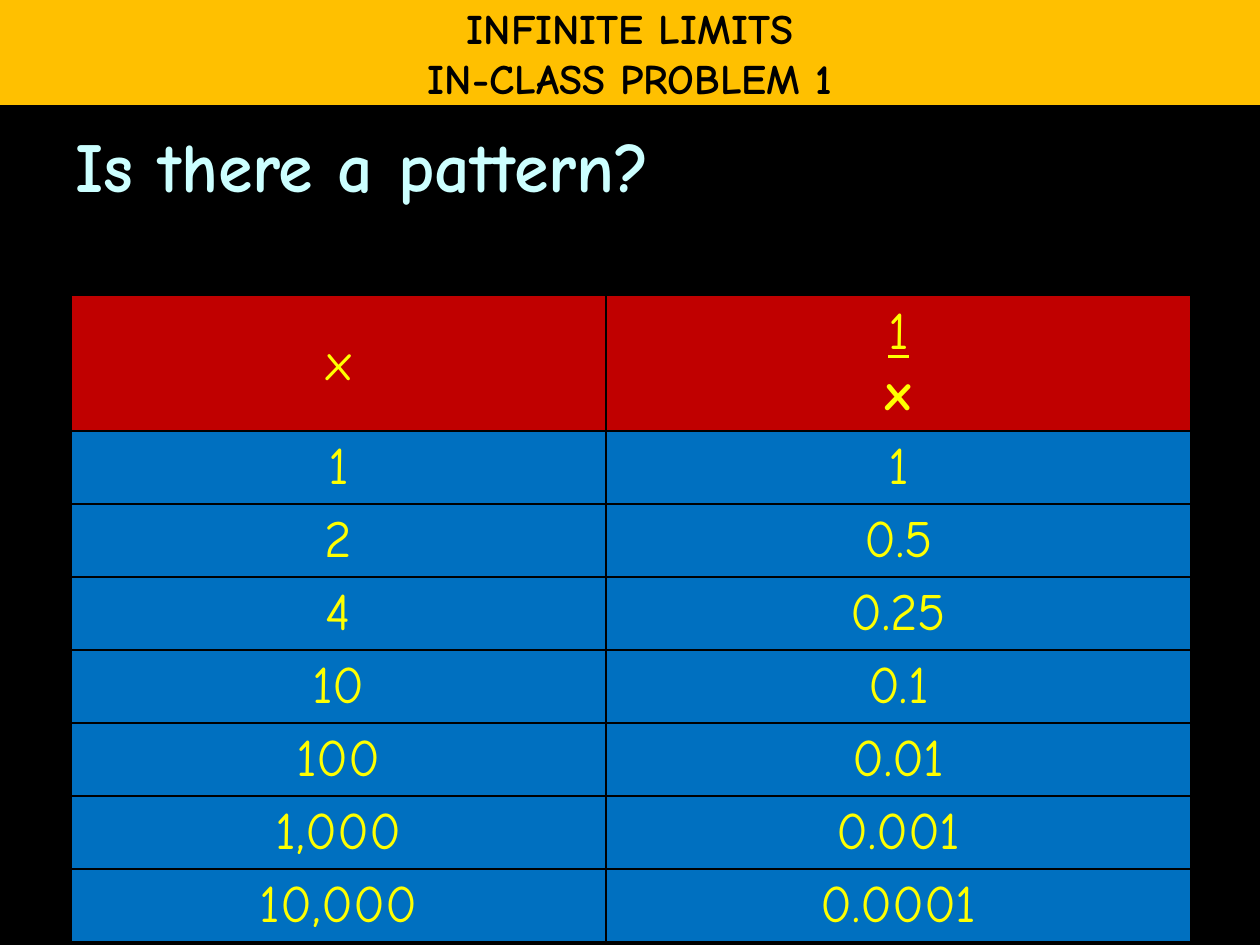
from lxml import etree
from pptx import Presentation, util as u
from pptx.dml.color import RGBColor
from pptx.enum import shapes, text
from pptx.oxml.ns import qn

PX = 914400 / 126
FONT = "Comic Neue"
HUES = {"back": "000000", "band": "FFC000", "ask": "CCFFFF", "head": "C00000",
        "body": "0070C0", "cell": "FFFF00", "rule": "000000", "ink": "000000"}
ROWS = [("x", "1\nx"), ("1", "1"), ("2", "0.5"), ("4", "0.25"), ("10", "0.1"),
        ("100", "0.01"), ("1,000", "0.001"), ("10,000", "0.0001")]


def px(*vals):
    return [u.Emu(round(v * PX)) for v in vals]


def paint(fill, hue):
    fill.solid()
    fill.fore_color.rgb = RGBColor.from_string(HUES[hue])


def style(frame, size, hue, bold=False, align=text.PP_ALIGN.CENTER):
    for par in frame.paragraphs:
        par.alignment = align
        for run in par.runs:
            font = run.font
            font.name, font.size, font.bold = FONT, u.Pt(size), bold
            font.color.rgb = RGBColor.from_string(HUES[hue])


def edge(cell):
    """Draw a thin rule on all four sides of a cell."""
    props = cell._tc.get_or_add_tcPr()
    for side in ("lnL", "lnR", "lnT", "lnB"):
        line = etree.SubElement(props, qn("a:" + side), w=str(u.Pt(1)))
        fill = etree.SubElement(line, qn("a:solidFill"))
        etree.SubElement(fill, qn("a:srgbClr"), val=HUES["rule"])


def add_ask(slide, box):
    frame = slide.shapes.add_textbox(*px(*box)).text_frame
    frame.word_wrap = True
    frame.text = "Is there a pattern?"
    style(frame, 40, "ask", True, text.PP_ALIGN.LEFT)
    frame.paragraphs[0].space_before = u.Pt(8)


def add_grid(slide, box, cols, top, step):
    grid = slide.shapes.add_table(len(ROWS), len(cols), *px(*box)).table
    grid.first_row = grid.horz_banding = False
    for col, wide in zip(grid.columns, px(*cols)):
        col.width = wide
    for r, row in enumerate(ROWS):
        grid.rows[r].height = px(step if r else top)[0]
        for c, word in enumerate(row):
            cell = grid.cell(r, c)
            cell.margin_left = cell.margin_right = px(5)[0]
            cell.margin_top = cell.margin_bottom = px(5)[0]
            cell.vertical_anchor = text.MSO_ANCHOR.MIDDLE
            cell.text_frame.text = word
            style(cell.text_frame, 30, "cell")
            edge(cell)
            paint(cell.fill, "body" if r else "head")
    # The heading fraction: underlined numerator over bold denominator
    over, under = grid.cell(0, 1).text_frame.paragraphs
    over.runs[0].font.underline = True
    under.runs[0].font.bold = True


def add_band(slide, box):
    band = slide.shapes.add_shape(shapes.MSO_SHAPE.RECTANGLE, *px(*box))
    band.shadow.inherit = False
    paint(band.fill, "band")
    band.line.fill.background()
    frame = band.text_frame
    frame.word_wrap = False
    frame.vertical_anchor = text.MSO_ANCHOR.MIDDLE
    frame.text = "INFINITE LIMITS\nIN-CLASS PROBLEM 1"
    style(frame, 24, "ink", True)


def main():
    deck = Presentation()
    deck.slide_width, deck.slide_height = px(1260, 945)
    slide = deck.slides.add_slide(deck.slide_layouts[6])
    paint(slide.background.fill, "back")
    # Question, table of values, title band
    add_ask(slide, (63, 116, 1134, 777))
    add_grid(slide, (71, 295, 1120, 628), (535, 585), 131, 71)
    add_band(slide, (0, 0, 1260, 105))
    deck.save("out.pptx")


if __name__ == "__main__":
    main()
